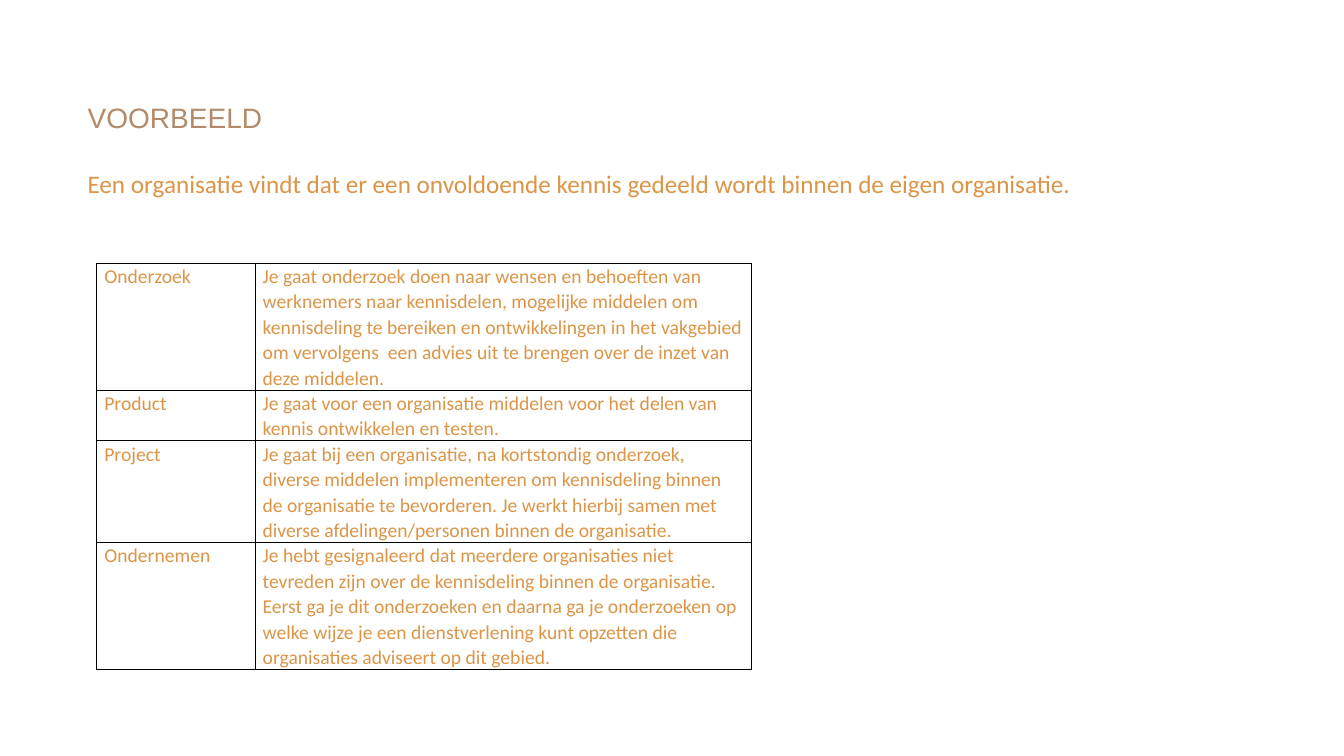
import lxml.etree
import pptx
import pptx.dml.color
import pptx.enum.text
import pptx.oxml.ns
import pptx.util

Cm = pptx.util.Cm
Pt = pptx.util.Pt
qn = pptx.oxml.ns.qn

COLOURS = {"title": "B48B6A", "body": "DC9547", "border": "000000"}
TITLE = {"name": "Arial", "size": Pt(20)}
LEAD = {"name": "Calibri", "size": Pt(18)}
CELL = {"name": "Calibri", "size": Pt(14)}
CELL_MARGINS = {"margin_left": Cm(0.19), "margin_right": Cm(0.19),
                "margin_top": 0, "margin_bottom": 0}
COLUMN_WIDTHS = (3.99, 12.5)
LINE_HEIGHT = 0.64

# Label, explanation and number of text lines of each row
EXAMPLES = [
    ("Onderzoek",
     "Je gaat onderzoek doen naar wensen en behoeften van werknemers naar "
     "kennisdelen, mogelijke middelen om kennisdeling te bereiken en "
     "ontwikkelingen in het vakgebied om vervolgens  een advies uit te "
     "brengen over de inzet van deze middelen.", 5),
    ("Product",
     "Je gaat voor een organisatie middelen voor het delen van kennis "
     "ontwikkelen en testen.", 2),
    ("Project",
     "Je gaat bij een organisatie, na kortstondig onderzoek, diverse middelen "
     "implementeren om kennisdeling binnen de organisatie te bevorderen. Je "
     "werkt hierbij samen met diverse afdelingen/personen binnen de "
     "organisatie.", 4),
    ("Ondernemen",
     "Je hebt gesignaleerd dat meerdere organisaties niet tevreden zijn over "
     "de kennisdeling binnen de organisatie. Eerst ga je dit onderzoeken en "
     "daarna ga je onderzoeken op welke wijze je een dienstverlening kunt "
     "opzetten die organisaties adviseert op dit gebied.", 5),
]


def apply(target, values):
    for name, value in values.items():
        setattr(target, name, value)


class Page:
    """Holds the colours and the current slide."""

    def __init__(self, deck, colours):
        self.slide = deck.slides.add_slide(deck.slide_layouts[6])
        self.colours = colours

    def fill_text(self, frame, text, style, colour, spacing):
        para = frame.paragraphs[0]
        para.line_spacing = spacing
        span = para.add_run()
        span.text = text
        apply(span.font, style)
        span.font.color.rgb = pptx.dml.color.RGBColor.from_string(
            self.colours[colour])

    def text(self, place, text, style, colour, spacing=1.0, wrap=True):
        box = self.slide.shapes.add_textbox(*map(Cm, place))
        apply(box.text_frame, {
            "word_wrap": wrap,
            "vertical_anchor": pptx.enum.text.MSO_ANCHOR.TOP})
        self.fill_text(box.text_frame, text, style, colour, spacing)

    def border(self, cell):
        """Draw a thin line on all four sides of the cell."""
        properties = cell._tc.get_or_add_tcPr()
        for index, side in enumerate(("lnL", "lnR", "lnT", "lnB")):
            line = lxml.etree.Element(qn("a:" + side), w=str(Pt(1)))
            fill = lxml.etree.SubElement(line, qn("a:solidFill"))
            lxml.etree.SubElement(fill, qn("a:srgbClr"),
                                  val=self.colours["border"])
            properties.insert(index, line)

    def table(self, left, top, widths, rows):
        heights = [lines * LINE_HEIGHT for *_, lines in rows]
        grid = self.slide.shapes.add_table(
            len(rows), len(widths), Cm(left), Cm(top),
            Cm(sum(widths)), Cm(sum(heights))).table
        apply(grid, {"first_row": False, "horz_banding": False})
        for column, width in zip(grid.columns, widths):
            column.width = Cm(width)
        for row, height, (*texts, _) in zip(grid.rows, heights, rows):
            row.height = Cm(height)
            for cell, text in zip(row.cells, texts):
                apply(cell, CELL_MARGINS)
                cell.fill.background()
                self.border(cell)
                self.fill_text(cell.text_frame, text, CELL, "body", 1.07)


def main():
    deck = pptx.Presentation()
    apply(deck, {"slide_width": Cm(33.87), "slide_height": Cm(19.05)})
    page = Page(deck, COLOURS)
    page.text((1.96, 2.51, 29.59, 2.51), "VOORBEELD", TITLE, "title", 0.9)
    page.table(2.44, 6.63, COLUMN_WIDTHS, EXAMPLES)
    page.text((1.96, 4.11, 25.96, 1.8),
              "Een organisatie vindt dat er een onvoldoende kennis gedeeld "
              "wordt binnen de eigen organisatie.", LEAD, "body", wrap=False)
    deck.save("out.pptx")


if __name__ == "__main__":
    main()
